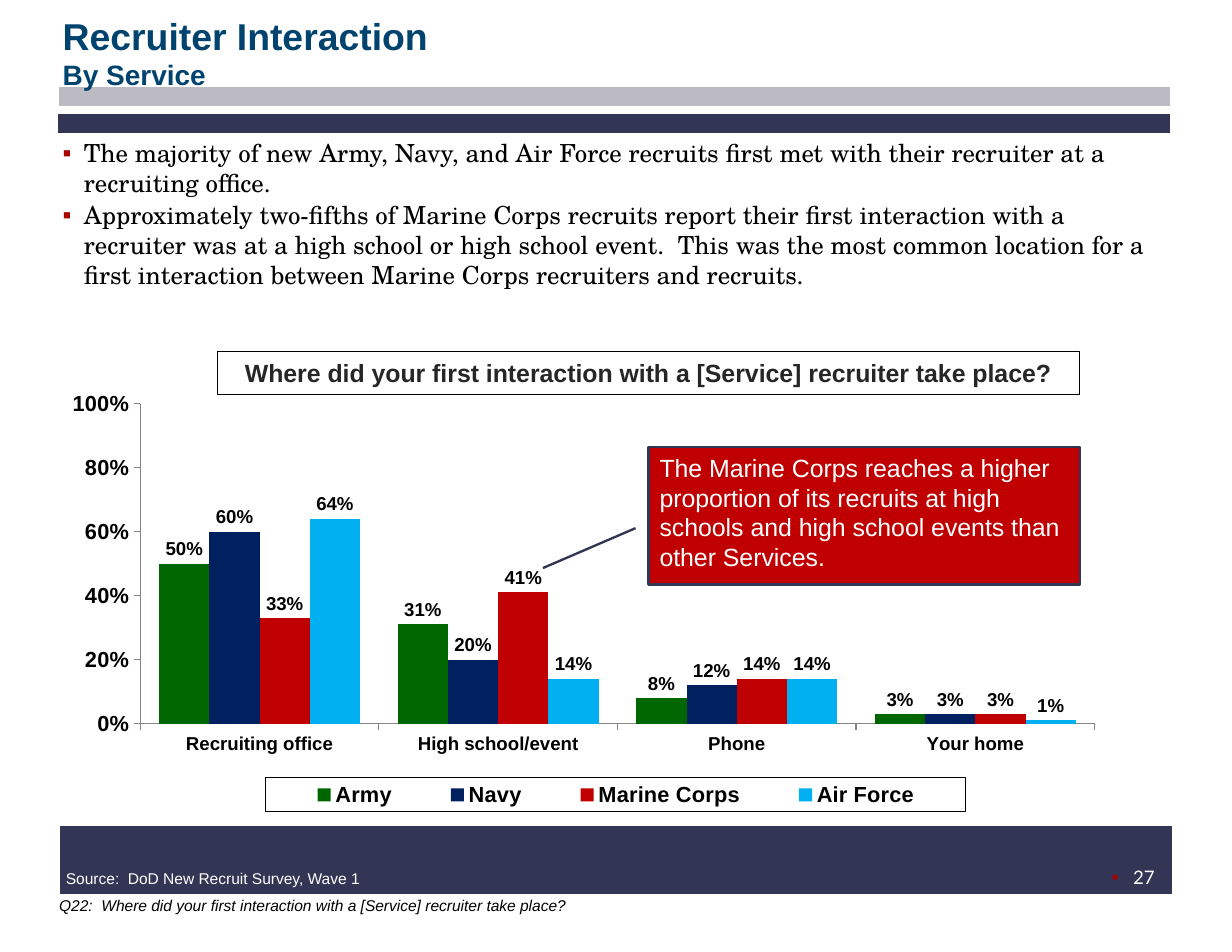
from lxml.etree import SubElement
from pptx import Presentation
from pptx.chart.data import CategoryChartData
from pptx.dml.color import RGBColor
from pptx.enum.chart import XL_CHART_TYPE as ChartType, XL_LABEL_POSITION as LabelPosition
from pptx.enum.chart import XL_LEGEND_POSITION as LegendPosition, XL_TICK_MARK as Tick
from pptx.enum.shapes import MSO_CONNECTOR as Connector, MSO_SHAPE as Preset
from pptx.enum.text import MSO_ANCHOR as Anchor, PP_ALIGN as Align
from pptx.oxml import parse_xml
from pptx.oxml.ns import nsdecls, qn
from pptx.util import Emu, Inches, Pt

THEME = {
    "sans": "Arial", "serif": "TeX Gyre Schola", "number": "Lato",
    "title": "00436E", "band": "323554", "rule": "BCBAC2", "axis": "868686",
    "bullet": "AB0101", "accent": "C00000", "question": "262626",
    "black": "000000", "white": "FFFFFF",
    "huge": 24, "large": 18, "body": 16, "medium": 14, "label": 12, "small": 10,
}
TITLE = [("Recruiter Interaction", "huge"), ("By Service", "large")]
FINDINGS = [
    "The majority of new Army, Navy, and Air Force recruits first met with their recruiter at a "
    "recruiting office.",
    "Approximately two-fifths of Marine Corps recruits report their first interaction with a recruiter "
    "was at a high school or high school event.  This was the most common location for a first "
    "interaction between Marine Corps recruiters and recruits.",
]
QUESTION = "Where did your first interaction with a [Service] recruiter take place?"
CALLOUT = ("The Marine Corps reaches a higher proportion of its recruits at high schools and high "
           "school events than other Services.")
SOURCE = "Source:  DoD New Recruit Survey, Wave 1"
PLACES = ["Recruiting office", "High school/event", "Phone", "Your home"]
SERVICES = [
    ("Army", "006600", (0.50, 0.31, 0.08, 0.03)),
    ("Navy", "002060", (0.60, 0.20, 0.12, 0.03)),
    ("Marine Corps", "C00000", (0.33, 0.41, 0.14, 0.03)),
    ("Air Force", "00B0F0", (0.64, 0.14, 0.14, 0.01)),
]
BANDS = [  # left, right, middle, colour, thickness in points
    (0.53, 10.45, 0.86, "rule", 12),
    (0.54, 10.46, 7.68, "band", 44),
    (0.52, 10.45, 1.10, "band", 12),
]
PLOT_AREA = (0.087, 0.132, 0.859, 0.657)
LEGEND_AREA = (0.2, 0.9, 0.63, 0.07)


def color(name):
    return RGBColor.from_string(THEME.get(name, name))


def inches(*values):
    return [Inches(value) for value in values]


def style_font(font, size, ink="black", face="sans", **flags):
    values = {"name": THEME[face], "size": Pt(THEME[size]), **flags}
    for name, value in values.items():
        setattr(font, name, value)
    font.color.rgb = color(ink)


def add_bullet(paragraph, margin=0.19):
    properties = paragraph._p.get_or_add_pPr()
    properties.set("marL", str(Inches(margin)))
    properties.set("indent", str(Inches(-0.19)))
    ink = SubElement(properties, qn("a:buClr"))
    SubElement(ink, qn("a:srgbClr")).set("val", THEME["bullet"])
    SubElement(properties, qn("a:buFont")).set("typeface", THEME["sans"])
    SubElement(properties, qn("a:buChar")).set("char", "▪")


def write(shape, lines, size="body", inset=(0.1, 0.05), anchor=Anchor.TOP, align=Align.LEFT,
          gap=0, bullet_margin=None, **style):
    """Fill a shape with paragraphs; a line is a text or a (text, size) pair."""
    frame = shape.text_frame
    across, down = inches(*inset)
    for name, value in {"word_wrap": True, "vertical_anchor": anchor, "margin_left": across,
                        "margin_right": across, "margin_top": down, "margin_bottom": down}.items():
        setattr(frame, name, value)
    for index, line in enumerate(lines):
        text, text_size = line if isinstance(line, tuple) else (line, size)
        paragraph = frame.add_paragraph() if index else frame.paragraphs[0]
        paragraph.alignment = align
        if index and gap:
            paragraph.space_before = Pt(gap)
        if bullet_margin is not None:
            add_bullet(paragraph, bullet_margin)
        run = paragraph.add_run()
        run.text = text
        style_font(run.font, text_size, **style)


def add_box(shapes, preset, box, line, weight, fill=None):
    shape = shapes.add_shape(preset, *inches(*box))
    shape.shadow.inherit = False
    if fill:
        shape.fill.solid()
        shape.fill.fore_color.rgb = color(fill)
    else:
        shape.fill.background()
    shape.line.color.rgb = color(line)
    shape.line.width = Pt(weight)
    return shape


def add_band(shapes, left, right, middle, ink, thickness):
    band = shapes.add_connector(Connector.STRAIGHT, *inches(left, middle, right, middle))
    band.line.color.rgb = color(ink)
    band.line.width = Pt(thickness)
    SubElement(band._element.spPr, qn("a:effectLst"))


def layout_xml(area, inner=False):
    target = '<c:layoutTarget val="inner"/>' if inner else ""
    modes = "".join(f'<c:{side}Mode val="edge"/>' for side in "xy")
    sizes = "".join(f'<c:{name} val="{value}"/>' for name, value in zip("xywh", area))
    return parse_xml(f'<c:layout {nsdecls("c")}><c:manualLayout>{target}{modes}{sizes}'
                     '</c:manualLayout></c:layout>')


def place(element, area, after=None, inner=False):
    for old in element.findall(qn("c:layout")):
        element.remove(old)
    position = 0 if after is None else element.index(element.find(qn(after))) + 1
    element.insert(position, layout_xml(area, inner))


def add_service_chart(shapes):
    data = CategoryChartData(number_format="0%")
    data.categories = PLACES
    for name, _, shares in SERVICES:
        data.add_series(name, shares)
    chart = shapes.add_chart(ChartType.COLUMN_CLUSTERED, *inches(0.39, 3.03, 9.92, 4.35), data).chart
    chart.has_title = False
    style_font(chart.font, "label", bold=True)

    plot = chart.plots[0]
    for name, value in {"gap_width": 75, "overlap": 0, "vary_by_categories": False}.items():
        setattr(plot, name, value)
    for series, (_, ink, _) in zip(plot.series, SERVICES):
        series.format.fill.solid()
        series.format.fill.fore_color.rgb = color(ink)
        labels = series.data_labels
        for name, value in {"show_value": True, "number_format": "0%", "number_format_is_linked": False,
                            "position": LabelPosition.OUTSIDE_END}.items():
            setattr(labels, name, value)
        style_font(labels.font, "label", bold=True)

    for axis, size in ((chart.category_axis, "label"), (chart.value_axis, "medium")):
        axis.has_major_gridlines = False
        axis.major_tick_mark = Tick.OUTSIDE
        axis.format.line.color.rgb = color("axis")
        style_font(axis.tick_labels.font, size, bold=True)
    for name, value in {"minimum_scale": 0, "maximum_scale": 1, "major_unit": 0.2}.items():
        setattr(chart.value_axis, name, value)
    chart.value_axis.tick_labels.number_format = "0%"
    chart.value_axis.tick_labels.number_format_is_linked = False

    chart.has_legend = True
    legend = chart.legend
    legend.position = LegendPosition.BOTTOM
    legend.include_in_layout = False
    style_font(legend.font, "medium", bold=True)
    place(legend._element, LEGEND_AREA, "c:legendPos")
    border = parse_xml(f'<c:spPr {nsdecls("c", "a")}><a:ln w="{Pt(0.75)}"><a:solidFill>'
                       f'<a:srgbClr val="{THEME["black"]}"/></a:solidFill></a:ln></c:spPr>')
    legend._element.find(qn("c:txPr")).addprevious(border)
    place(chart._chartSpace.chart.plotArea, PLOT_AREA, inner=True)


def main():
    presentation = Presentation()
    presentation.slide_width, presentation.slide_height = inches(11, 8.5)
    shapes = presentation.slides.add_slide(presentation.slide_layouts[6]).shapes

    def add_text(box, lines, **style):
        write(shapes.add_textbox(*inches(*box)), lines, **style)

    for band in BANDS:
        add_band(shapes, *band)
    add_service_chart(shapes)
    add_text((9.6, 7.68, 1.17, 0.58), ["27"], size="label", face="number", ink="white",
             align=Align.CENTER, bullet_margin=0.05)
    add_text((0.5, 1.17, 10, 0.97), FINDINGS, face="serif", inset=(0.06, 0.06), gap=1.6,
             bullet_margin=0.19)
    question = add_box(shapes, Preset.RECTANGLE, (1.94, 3.14, 7.7, 0.38), "black", 0.75)
    write(question, [QUESTION], ink="question", inset=(0.11, 0.06), anchor=Anchor.MIDDLE,
          align=Align.CENTER, bold=True)
    add_text((0.43, 7.95, 10.02, 0.27), [f"Q22:  {QUESTION}"], size="small", italic=True)
    callout = add_box(shapes, Preset.LINE_CALLOUT_1, (5.79, 3.99, 3.85, 1.23), "band", 1.5, "accent")
    for index, share in enumerate((0.59, -0.03, 0.88, -0.245)):
        callout.adjustments[index] = share
    write(callout, [CALLOUT], ink="white")
    add_text((0.49, 7.71, 5.5, 0.27), [SOURCE], size="small", ink="white")
    add_text((0.5, 0.18, 10.05, 0.57), TITLE, ink="title", inset=(0.06, 0.06),
             anchor=Anchor.MIDDLE, bold=True)
    presentation.save("out.pptx")


if __name__ == "__main__":
    main()
